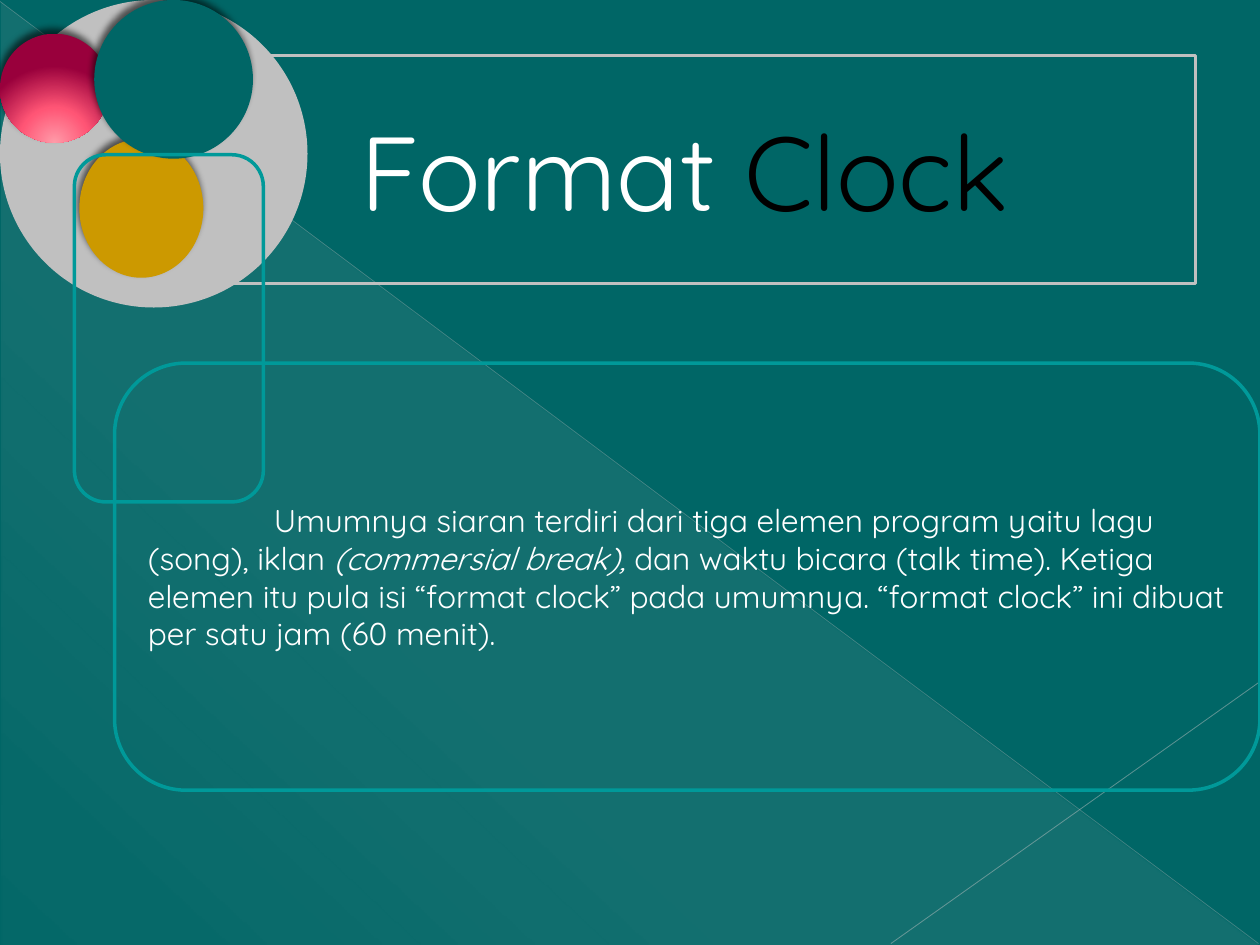
from lxml import etree
from pptx import Presentation
from pptx.dml.color import RGBColor
from pptx.enum.shapes import MSO_CONNECTOR, MSO_SHAPE
from pptx.enum.text import MSO_ANCHOR, MSO_AUTO_SIZE, PP_ALIGN
from pptx.oxml.ns import qn
from pptx.util import Cm, Pt

OVAL = MSO_SHAPE.OVAL
ROUND = MSO_SHAPE.ROUNDED_RECTANGLE
WEDGE = MSO_SHAPE.RIGHT_TRIANGLE
STRAIGHT = MSO_CONNECTOR.STRAIGHT
MIDDLE = MSO_ANCHOR.MIDDLE
LEFT, CENTER = PP_ALIGN.LEFT, PP_ALIGN.CENTER
NO_FIT = MSO_AUTO_SIZE.NONE

TEAL = RGBColor(0x00, 0x66, 0x66)
AQUA = RGBColor(0x00, 0x99, 0x99)
SILVER = RGBColor(0xC0, 0xC0, 0xC0)
ASH = RGBColor(0xBF, 0xBF, 0xBF)
MIST = RGBColor(0xC6, 0xC6, 0xC6)
PALE = RGBColor(0xD2, 0xD2, 0xD2)
GOLD = RGBColor(0xCC, 0x99, 0x00)
BLUSH = RGBColor(0xFF, 0x9B, 0xA9)
ROSE = RGBColor(0xFF, 0x55, 0x75)
WINE = RGBColor(0x99, 0x00, 0x3C)
WHITE = RGBColor(0xFF, 0xFF, 0xFF)
BLACK = RGBColor(0x00, 0x00, 0x00)


def node(parent, tag, **attrs):
    return etree.SubElement(parent, qn(tag), {k: str(v) for k, v in attrs.items()})


def tint(parent, color, alpha):
    item = node(parent, "a:srgbClr", val=color)
    node(item, "a:alpha", val=alpha * 1000)


class Deck:
    font = "Quicksand"
    width = Pt(2)

    def __init__(self):
        self.prs = Presentation()
        self.prs.slide_width, self.prs.slide_height = Cm(25.4), Cm(19.05)
        self.slide = self.prs.slides.add_slide(self.prs.slide_layouts[1])
        self.slide.background.fill.solid()
        self.slide.background.fill.fore_color.rgb = TEAL
        self.shapes = self.slide.shapes

    def shape(self, kind, box, fill=None, line=None, parent=None):
        item = (parent or self.shapes).add_shape(kind, *map(Cm, box))
        item.shadow.inherit = False
        if fill is None:
            item.fill.background()
        else:
            item.fill.solid()
            item.fill.fore_color.rgb = fill
        self.edge(item, line)
        return item

    def edge(self, item, color):
        if color is None:
            item.line.fill.background()
        else:
            item.line.color.rgb = color
            item.line.width = self.width

    def blend(self, item, stops, angle=None, focus=None):
        props = item._element.spPr
        grad = etree.Element(qn("a:gradFill"), rotWithShape="1")
        props.replace(props.find(qn("a:solidFill")), grad)
        items = node(grad, "a:gsLst")
        for pos, color, alpha in stops:
            tint(node(items, "a:gs", pos=pos * 1000), color, alpha)
        if focus:
            route = node(grad, "a:path", path="circle")
            sides = {k: v * 1000 for k, v in zip("ltrb", focus)}
            node(route, "a:fillToRect", **sides)
        else:
            node(grad, "a:lin", ang=angle * 60000, scaled=0)

    def ball(self, group, box, fill):
        item = self.shape(OVAL, box, fill, parent=group.shapes)
        effects = item._element.spPr.find(qn("a:effectLst"))
        shade = node(effects, "a:outerShdw", blurRad=Pt(4), dist=Pt(3),
                     dir=245 * 60000, algn="ctr", rotWithShape=0)
        tint(shade, BLACK, 60)
        return item

    def rule(self, ends, color, width, alpha):
        item = self.shapes.add_connector(STRAIGHT, *map(Cm, ends))
        item.line.color.rgb = color
        item.line.width = Pt(width)
        props = item._element.spPr
        node(props.find(".//" + qn("a:srgbClr")), "a:alpha", val=alpha * 1000)
        node(props, "a:effectLst")

    def text(self, item, box, size, align, runs, pad=0.25, indent=0):
        self.shapes._spTree.append(item._element)
        item.left, item.top, item.width, item.height = map(Cm, box)
        frame = item.text_frame
        frame.word_wrap, frame.auto_size = True, NO_FIT
        frame.vertical_anchor = MIDDLE
        frame.margin_left = frame.margin_right = Cm(pad)
        para = frame.paragraphs[0]
        para.alignment = align
        para.space_before = Pt(0)
        props = para._p.get_or_add_pPr()
        props.set("marL", "0")
        props.set("indent", str(Cm(indent)))
        node(props, "a:buNone")
        for words, color, slant in runs:
            run = para.add_run()
            run.text = words
            run.font.name, run.font.size = self.font, Pt(size)
            run.font.italic = slant
            run.font.color.rgb = color


def main():
    deck = Deck()
    wedge = deck.shape(WEDGE, (0.03, 0.05, 25.35, 19), PALE)
    deck.blend(wedge, [(0, PALE, 10), (70, PALE, 8), (100, PALE, 1)], angle=133)
    deck.rule((0, 0.03, 25.37, 19.02), ASH, 0.39, 35)
    deck.rule((25.4, 13.74, 17.96, 19.02), MIST, 0.47, 45)
    deck.shape(OVAL, (0, 0, 6.2, 6.2), SILVER)

    title = deck.shapes.title
    deck.text(title, (3.5, 1.12, 20.6, 4.6), 60, CENTER,
              [("Format", WHITE, False), (" Clock", BLACK, False)])
    deck.edge(title, SILVER)

    panel = (2.31, 7.32, 23.09, 8.61)
    deck.shape(ROUND, panel, line=AQUA)
    deck.text(deck.slide.placeholders[1], panel, 18, LEFT, [
        ("Umumnya siaran terdiri dari tiga elemen program yaitu lagu (song), iklan ",
         WHITE, False),
        ("(commersial break), ", WHITE, True),
        ("dan waktu bicara (talk time). Ketiga elemen itu pula isi “format clock” "
         "pada umumnya. “format clock” ini dibuat per satu jam (60 menit).",
         WHITE, False),
    ], pad=0.67, indent=2.54)

    group = deck.shapes.add_group_shape()
    deck.ball(group, (1.6, 2.8, 2.5, 2.8), GOLD)
    ruby = deck.ball(group, (0, 0.68, 2.2, 2.2), ROSE)
    deck.blend(ruby, [(0, BLUSH, 100), (46, ROSE, 100), (100, WINE, 100)],
               focus=(50, 155, 50, -55))
    deck.ball(group, (1.9, 0, 3.2, 3.2), TEAL)
    deck.shape(ROUND, (1.5, 3.12, 3.81, 7), line=AQUA)
    deck.prs.save("out.pptx")


if __name__ == "__main__":
    main()
